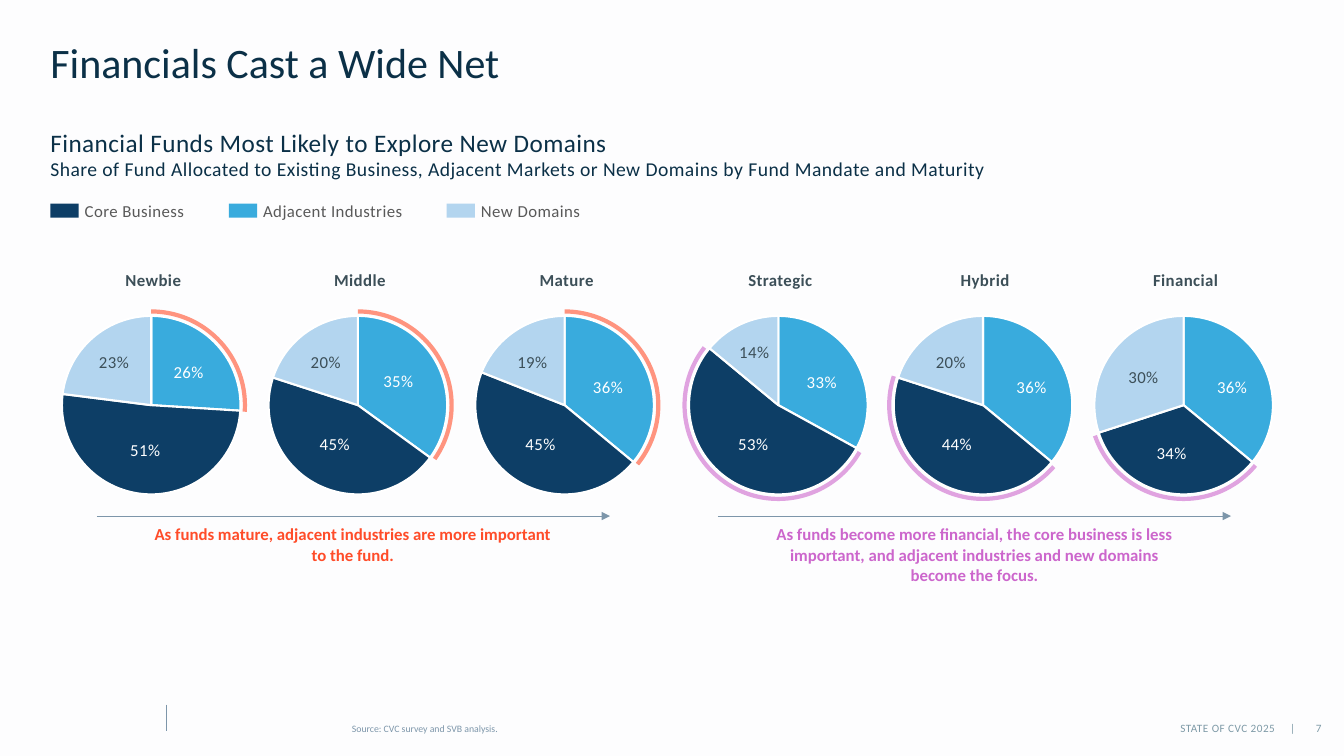
from dataclasses import dataclass

from pptx import Presentation
from pptx.chart.data import CategoryChartData
from pptx.dml.color import RGBColor
from pptx.enum.chart import XL_CHART_TYPE
from pptx.enum.shapes import MSO_CONNECTOR, MSO_SHAPE
from pptx.enum.text import MSO_ANCHOR, PP_ALIGN
from pptx.oxml import parse_xml
from pptx.oxml.ns import nsdecls, qn
from pptx.util import Emu, Pt

PIE = XL_CHART_TYPE.PIE
ARC, RECTANGLE = MSO_SHAPE.ARC, MSO_SHAPE.RECTANGLE
STRAIGHT = MSO_CONNECTOR.STRAIGHT
LEFT, CENTER, RIGHT = PP_ALIGN.LEFT, PP_ALIGN.CENTER, PP_ALIGN.RIGHT
TOP, BOTTOM = MSO_ANCHOR.TOP, MSO_ANCHOR.BOTTOM

EMU_PER_PX = 9144
FONT = "Calibri"
NAVY, BLUE, PALE = "0D3E66", "39ABDD", "B3D5EF"
INK, SLATE, GREY = "0B3047", "3C4F58", "595959"
STEEL, FOOTER, WHITE = "7D96AA", "7E9AA7", "FFFFFF"
CORAL, ORCHID = "FF947F", "E0A3E0"
SLICE_COLORS = (BLUE, NAVY, PALE)
LABEL_COLORS = (WHITE, WHITE, SLATE)


@dataclass
class Fund:
    """One pie: its shares, label corners and highlighted arc in degrees."""
    name: str
    left: int
    shares: tuple
    corners: tuple
    arc: tuple
    arc_color: str


FUNDS = (
    Fund("Newbie", 47, (26, 51, 23), ((160, 359), (117, 436), (86, 349)), (270, 4), CORAL),
    Fund("Middle", 252, (35, 45, 20), ((368, 368), (305, 430), (296, 349)), (270, 35), CORAL),
    Fund("Mature", 457, (36, 45, 19), ((576, 374), (509, 430), (501, 349)), (270, 39), CORAL),
    Fund("Strategic", 669, (33, 53, 14), ((788, 369), (720, 430), (721, 339)), (30, 218), ORCHID),
    Fund("Hybrid", 872, (36, 44, 20), ((996, 374), (922, 430), (916, 349)), (41, 198), ORCHID),
    Fund("Financial", 1071, (36, 34, 30), ((1195, 374), (1135, 439), (1107, 364)), (40, 161), ORCHID),
)
LEGEND = ((50, "Core Business", NAVY), (227, "Adjacent Industries", BLUE),
          (443, "New Domains", PALE))
TRENDS = (
    (96, 146, 408, 40, "FF4C29",
     "As funds mature, adjacent industries are more important to the fund."),
    (712, 757, 419, 60, "CC66CC",
     "As funds become more financial, the core business is less important, "
     "and adjacent industries and new domains become the focus."),
)


def px(*lengths):
    """Turn pixel lengths into EMU."""
    return [Emu(length * EMU_PER_PX) for length in lengths]


def color(hex_value):
    """Turn a hex string into a colour."""
    return RGBColor.from_string(hex_value)


def add_text(page, at, text, sizes, ink, align=LEFT, bold=False, spacing=30,
             anchor=TOP, line_spacing=None):
    """Add a text box whose lines take the given sizes."""
    frame = page.shapes.add_textbox(*px(*at)).text_frame
    frame.word_wrap = True
    frame.vertical_anchor = anchor
    frame.margin_left = frame.margin_right = frame.margin_top = frame.margin_bottom = 0
    para = frame.paragraphs[0]
    para.text = text
    para.alignment = align
    if line_spacing:
        para.line_spacing = line_spacing
    for span, size in zip(para.runs, sizes):
        span.font.name = FONT
        span.font.size = Pt(size)
        span.font.bold = bold
        span.font.color.rgb = color(ink)
        span.font._element.set("spc", str(spacing))


def add_line(page, start, end, width, arrow=False):
    """Add a straight line, with an arrowhead at its end if asked."""
    line = page.shapes.add_connector(STRAIGHT, *px(*start, *end))
    line.line.color.rgb = color(STEEL)
    line.line.width = Pt(width)
    line._element.spPr.append(parse_xml(f"<a:effectLst {nsdecls('a')}/>"))
    if arrow:
        head = parse_xml(f'<a:tailEnd {nsdecls("a")} type="triangle"/>')
        line.line._get_or_add_ln().append(head)


def add_arc(page, at, degrees, ink):
    """Add an open arc between two angles."""
    arc = page.shapes.add_shape(ARC, *px(*at))
    arc.shadow.inherit = False
    arc.fill.background()
    arc.line.color.rgb = color(ink)
    arc.line.width = Pt(3)
    for index, angle in enumerate(degrees):
        arc.adjustments[index] = angle * 0.6


def set_plot_layout(chart, margin):
    """Inset the plot by the same share on every side."""
    plot_area = chart._chartSpace.find(".//" + qn("c:plotArea"))
    for layout in plot_area.findall(qn("c:layout")):
        plot_area.remove(layout)
    values = {"x": margin, "y": margin, "w": 1 - 2 * margin, "h": 1 - 2 * margin}
    modes = "".join(f'<c:{side}Mode val="edge"/>' for side in "xy")
    lengths = "".join(f'<c:{key} val="{value:.2f}"/>' for key, value in values.items())
    plot_area.insert(0, parse_xml(
        f'<c:layout {nsdecls("c")}><c:manualLayout><c:layoutTarget val="inner"/>'
        f"{modes}{lengths}</c:manualLayout></c:layout>"))


def add_pie(page, at, shares):
    """Add a pie chart with white gaps between its slices."""
    data = CategoryChartData()
    data.categories = ["1", "2", "3"]
    data.add_series("Series 1", shares)
    chart = page.shapes.add_chart(PIE, *px(*at), data).chart
    chart.has_legend = False
    chart.has_title = False
    chart.font.name = FONT
    chart.font.size = Pt(10)
    chart.font.color.rgb = color("000000")
    chart.plots[0].vary_by_categories = False
    for index, slice_color in enumerate(SLICE_COLORS):
        style = chart.plots[0].series[0].points[index].format
        style.fill.solid()
        style.fill.fore_color.rgb = color(slice_color)
        style.line.color.rgb = color(WHITE)
        style.line.width = Pt(1.5)
    set_plot_layout(chart, 0.07)


def add_fund(page, fund):
    """Add one fund's pie, arc, heading and share labels."""
    add_pie(page, (fund.left, 299, 206, 206), fund.shares)
    add_arc(page, (fund.left + 10, 309, 186, 186), fund.arc, fund.arc_color)
    add_text(page, (fund.left + 30, 268, 150, 20), fund.name, [12], SLATE, CENTER, bold=True)
    for share, corner, ink in zip(fund.shares, fund.corners, LABEL_COLORS):
        add_text(page, (*corner, 54, 20), f"{share}%", [12], ink, CENTER)


def add_legend_entry(page, left, name, fill):
    """Add a legend swatch and its name."""
    swatch = page.shapes.add_shape(RECTANGLE, *px(left, 202, 28, 14))
    swatch.shadow.inherit = False
    swatch.fill.solid()
    swatch.fill.fore_color.rgb = color(fill)
    swatch.line.fill.background()
    add_text(page, (left + 34, 199, 155, 20), name, [12], GREY)


def add_trend(page, arrow_left, left, width, height, ink, text):
    """Add a trend arrow with its takeaway below."""
    add_line(page, (arrow_left, 512), (arrow_left + 509, 512), 0.5, arrow=True)
    add_text(page, (left, 520, width, height), text, [12], ink, CENTER, bold=True, spacing=0)


def main():
    """Build and save the slide."""
    deck = Presentation()
    deck.slide_width, deck.slide_height = px(1333, 750)
    page = deck.slides.add_slide(deck.slide_layouts[6])
    page.background.fill.solid()
    page.background.fill.fore_color.rgb = color("FDFDFE")

    add_text(page, (50, 42, 1173, 45), "Financials Cast a Wide Net", [30], INK,
             spacing=0, line_spacing=0.9)
    add_text(page, (50, 126, 966, 54),
             "Financial Funds Most Likely to Explore New Domains\v"
             "Share of Fund Allocated to Existing Business, Adjacent Markets "
             "or New Domains by Fund Mandate and Maturity", [18, 14], INK)
    for entry in LEGEND:
        add_legend_entry(page, *entry)
    for fund in FUNDS:
        add_fund(page, fund)
    for trend in TRENDS:
        add_trend(page, *trend)

    add_line(page, (165, 699), (165, 725), 0.75)
    add_text(page, (349, 718, 608, 11), "Source: CVC survey and SVB analysis.", [7], STEEL,
             spacing=0, anchor=BOTTOM, line_spacing=0.9)
    add_text(page, (1079, 713, 206, 16), "STATE OF CVC 2025     |", [8], FOOTER, RIGHT,
             anchor=BOTTOM)
    add_text(page, (1283, 713, 50, 16), "7", [8], FOOTER, CENTER, anchor=BOTTOM)
    deck.save("out.pptx")


if __name__ == "__main__":
    main()
